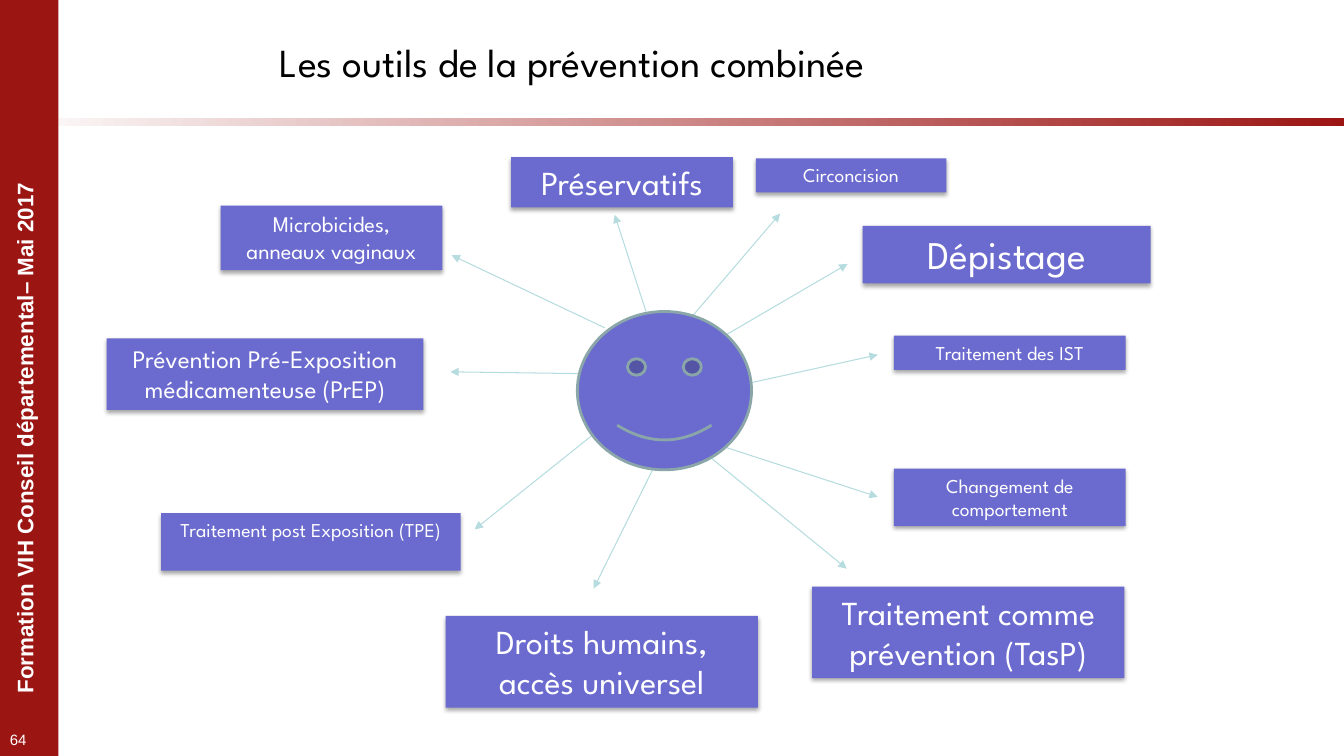
from lxml import etree
from pptx import Presentation, util as u
from pptx.dml.color import RGBColor
from pptx.enum import shapes, text
from pptx.oxml import parse_xml
from pptx.oxml.ns import nsdecls, qn

RED, VIOLET, WHITE, BLACK = "9B1513", "6B6BCF", "FFFFFF", "000000"
ARROW, OUTLINE = "B6DCDF", "8AA6A8"
BODY_FONT, FRAME_FONT = "League Spartan", "Arial"
SHADOW = (
    f'<a:outerShdw {nsdecls("a")} blurRad="39370" dist="22860" dir="5400000"'
    ' rotWithShape="0"><a:srgbClr val="000000"><a:alpha val="35000"/>'
    '</a:srgbClr></a:outerShdw>'
)

# Label, size in points, box (left, top, width, height), arrow (from, to), in cm
TOOLS = [
    ("Circoncision", 14, (19.05, 3.99, 4.8, 0.86), (17.42, 8, 19.66, 5.38)),
    ("Dépistage", 28, (21.74, 5.69, 7.26, 1.45), (18.31, 8.43, 21.36, 6.65)),
    ("Traitement des IST", 14, (22.53, 8.46, 5.84, 0.86), (18.9, 9.65, 22.12, 8.94)),
    ("Changement de comportement", 14, (22.53, 11.81, 5.84, 1.45), (18.16, 11.23, 22.12, 12.52)),
    ("Traitement comme prévention (TasP)", 24, (20.47, 14.78, 7.87, 2.31), (17.75, 11.4, 21.34, 14.33)),
    ("Droits humains, accès universel", 24, (11.23, 15.52, 7.87, 2.31), (16.56, 11.61, 14.96, 14.83)),
    ("Traitement post Exposition (TPE)", 14, (4.06, 12.93, 7.55, 1.45), (15.01, 10.9, 11.96, 13.34)),
    ("Prévention Pré-Exposition médicamenteuse (PrEP)", 18, (2.69, 8.53, 7.98, 1.8), (15.01, 9.42, 11.35, 9.37)),
    ("Microbicides, anneaux vaginaux", 16, (5.56, 5.18, 5.59, 1.63), (15.24, 8.26, 11.38, 6.43)),
    ("Préservatifs", 24, (12.88, 3.96, 5.59, 1.27), (16.28, 7.85, 15.49, 5.41)),
]


def rgb(value):
    return RGBColor.from_string(value)


def cm(values):
    return [u.Cm(v) for v in values]


class Deck:
    """Holds the style and the current slide."""

    def __init__(self, width, height):
        self.prs = Presentation()
        self.prs.slide_width, self.prs.slide_height = cm((width, height))
        self.s = self.prs.slides.add_slide(self.prs.slide_layouts[5])

    def label(self, sp, words, size, color, font=BODY_FONT, bold=False,
              align=text.PP_ALIGN.CENTER, anchor=text.MSO_ANCHOR.TOP, wrap=True):
        """Put one formatted run into a shape."""
        tf = sp.text_frame
        tf.word_wrap = wrap
        tf.auto_size = text.MSO_AUTO_SIZE.NONE
        tf.vertical_anchor = anchor
        p = tf.paragraphs[0]
        p.alignment = align
        r = p.add_run()
        r.text = words
        r.font.size, r.font.name, r.font.bold = u.Pt(size), font, bold
        r.font.color.rgb = rgb(color)

    def title(self, box, words, size):
        sp = self.s.shapes.title
        sp.left, sp.top, sp.width, sp.height = cm(box)
        self.label(sp, words, size, BLACK, anchor=text.MSO_ANCHOR.MIDDLE)

    def shape(self, kind, box, fill):
        sp = self.s.shapes.add_shape(kind, *cm(box))
        sp.shadow.inherit = False
        sp.fill.solid()
        sp.fill.fore_color.rgb = rgb(fill)
        sp.line.fill.background()
        return sp

    def rect(self, box, fill):
        return self.shape(shapes.MSO_SHAPE.RECTANGLE, box, fill)

    def gradient_bar(self, box, start, end):
        sp = self.rect(box, end)
        sp.fill.gradient()
        sp.fill.gradient_angle = 0
        for stop, color, position in zip(sp.fill.gradient_stops, (start, end), (0, 1)):
            stop.color.rgb = rgb(color)
            stop.position = position

    def textbox(self, box, words, size, rotation=0, **style):
        sp = self.s.shapes.add_textbox(*cm(box))
        sp.rotation = rotation
        self.label(sp, words, size, WHITE, FRAME_FONT, **style)

    def arrow(self, ends):
        c = self.s.shapes.add_connector(shapes.MSO_CONNECTOR.STRAIGHT, *cm(ends))
        c.line.width = u.Pt(0.75)
        c.line.color.rgb = rgb(ARROW)
        props = c._element.spPr
        etree.SubElement(props.find(qn("a:ln")), qn("a:tailEnd"), type="triangle")
        etree.SubElement(props, qn("a:effectLst"))

    def card(self, box, words, size):
        sp = self.rect(box, VIOLET)
        sp._element.spPr.find(qn("a:effectLst")).append(parse_xml(SHADOW))
        self.label(sp, words, size, WHITE)

    def smiley(self, box):
        sp = self.shape(shapes.MSO_SHAPE.SMILEY_FACE, box, VIOLET)
        sp.line.width = u.Pt(2)
        sp.line.color.rgb = rgb(OUTLINE)


def main():
    deck = Deck(33.87, 19.05)
    deck.gradient_bar((0, 2.97, 33.87, 0.2), WHITE, RED)
    deck.rect((0, 0, 1.47, 19.05), RED)
    deck.textbox((-6.22, 10.57, 13.69, 0.94), "Formation VIH Conseil départemental– Mai 2017",
                 16, rotation=270, bold=True, wrap=False)
    deck.textbox((0, 18.29, 1.4, 0.71), "64", 10.7, align=text.PP_ALIGN.LEFT)
    deck.title((0, 0.46, 28.86, 2.2), "Les outils de la prévention combinée", 28.4)
    for words, size, box, ends in TOOLS:
        deck.arrow(ends)
        deck.card(box, words, size)
    deck.smiley((14.55, 7.85, 4.39, 3.99))
    deck.prs.save("out.pptx")


if __name__ == "__main__":
    main()
